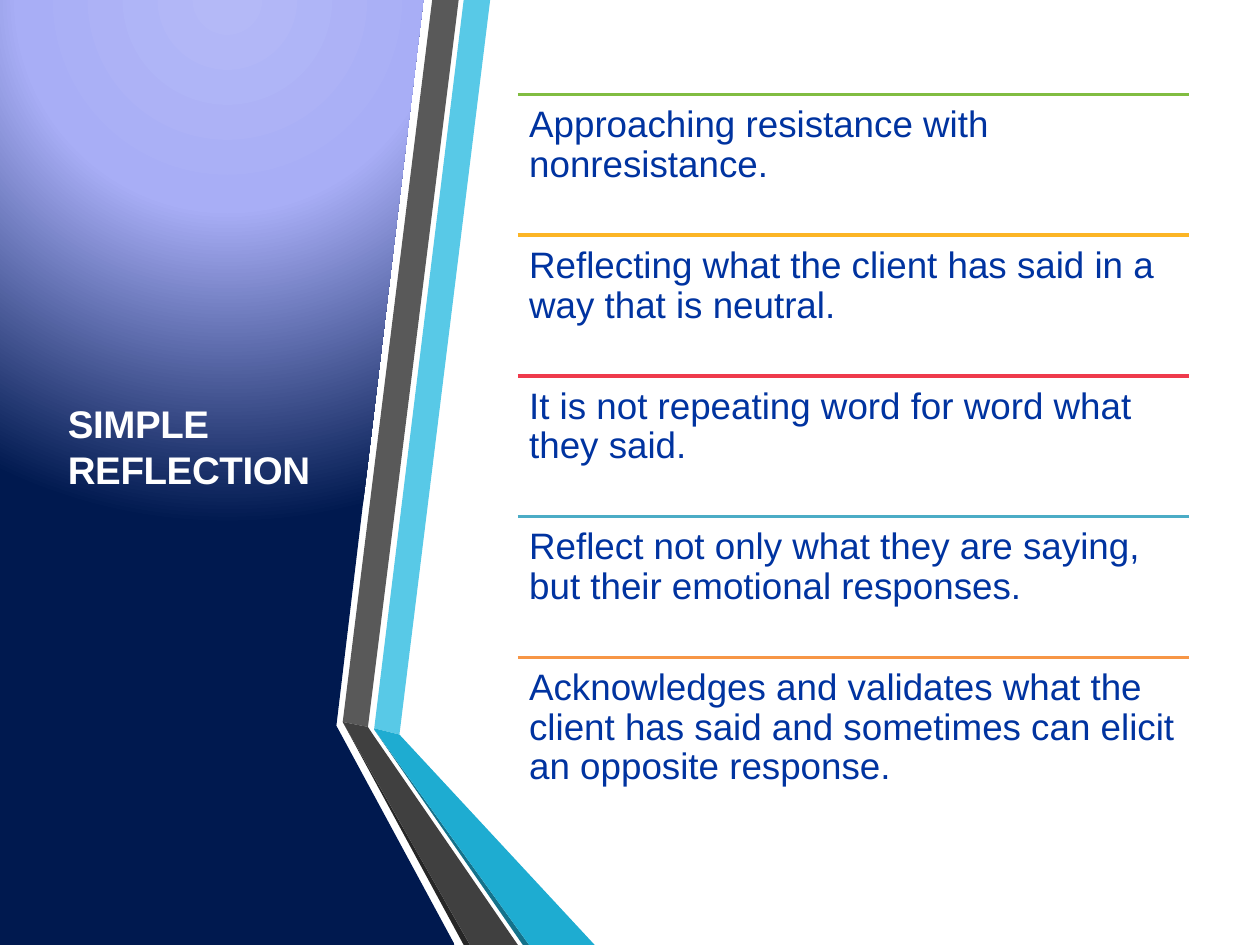
from lxml import etree
from pptx import Presentation
from pptx.dml.color import RGBColor
from pptx.enum.shapes import MSO_CONNECTOR
from pptx.enum.text import MSO_ANCHOR
from pptx.oxml import parse_xml
from pptx.oxml.ns import qn
from pptx.util import Inches, Pt

LINE = MSO_CONNECTOR.STRAIGHT
TOP, MIDDLE = MSO_ANCHOR.TOP, MSO_ANCHOR.MIDDLE
FONT = "Arial"
W, H = 10, 7.5

# List of points: one column, rows of equal height
LEFT, WIDTH = 4.11, 5.33
FIRST_ROW, ROW = 0.1 * H, 1.117
POINTS = [
    ("81BD41", "Approaching resistance with nonresistance."),
    ("FCB525", "Reflecting what the client has said in a way that is neutral."),
    ("EF3A4C", "It is not repeating word for word what they said."),
    ("4BACC6", "Reflect not only what they are saying, but their emotional responses."),
    ("F79646", "Acknowledges and validates what the client has said and "
               "sometimes can elicit an opposite response."),
]

# Left panel and the folded ribbons beside it
PANEL = [(0, 0), (3.36, 0), (2.67, 5.76), (3.61, H), (0, H)]
RIBBONS = [
    ("58C9E7", [(2.97, 5.78), (3.17, 5.83), (3.89, 0), (3.68, 0)]),
    ("595959", [(3.64, 0), (3.43, 0), (2.72, 5.73), (2.92, 5.77)]),
    ("262626", [(2.72, 5.73), (3.68, H), (3.73, H)]),
    ("14728B", [(2.97, 5.79), (4.15, H), (4.2, H)]),
    ("1EACD1", [(2.97, 5.79), (4.2, H), (4.72, H), (3.17, 5.83), (2.97, 5.78)]),
    ("404040", [(4.11, H), (2.96, 5.83), (2.92, 5.77), (2.72, 5.73), (3.73, H)]),
]
PANEL_STOPS = [(0, "B4B9F7"), (40, "A8AEF6"), (100, "00194F")]
A_NS = "http://schemas.openxmlformats.org/drawingml/2006/main"


def rgb(color):
    return RGBColor.from_string(color)


def add_outline(shapes, points, color):
    pts = [(Inches(x), Inches(y)) for x, y in points]
    builder = shapes.build_freeform(*pts[0], scale=1.0)
    builder.add_line_segments(pts[1:], close=True)
    sp = builder.convert_to_shape()
    sp.shadow.inherit = False
    sp.fill.solid()
    sp.fill.fore_color.rgb = rgb(color)
    sp.line.fill.background()
    return sp


def set_radial_fill(sp, stops):
    """Replace the solid fill by a circular gradient centred above the shape."""
    gs = "".join(f'<a:gs pos="{pos * 1000}"><a:srgbClr val="{color}"/></a:gs>'
                 for pos, color in stops)
    grad = parse_xml(
        f'<a:gradFill xmlns:a="{A_NS}" rotWithShape="1"><a:gsLst>{gs}</a:gsLst>'
        '<a:path path="circle"><a:fillToRect l="50000" t="-80000" r="50000" b="180000"/>'
        '</a:path></a:gradFill>')
    props = sp.fill._xPr
    props.replace(props.find(qn("a:solidFill")), grad)


def add_rule(shapes, x, y, width, color):
    line = shapes.add_connector(LINE, Inches(x), Inches(y), Inches(x + width), Inches(y))
    line.line.color.rgb = rgb(color)
    line.line.width = Pt(2)
    etree.SubElement(line._element.spPr, qn("a:effectLst"))


def add_text(shapes, box, text, size, color, anchor=TOP, inset=0.09, spacing=None):
    sp = shapes.add_textbox(*[Inches(v) for v in box])
    tf = sp.text_frame
    tf.word_wrap = True
    tf.vertical_anchor = anchor
    tf.margin_left = tf.margin_right = tf.margin_top = tf.margin_bottom = Inches(inset)
    p = tf.paragraphs[0]
    p.text = text
    p.line_spacing = spacing
    r = p.runs[0]
    r.font.name = FONT
    r.font.size = Pt(size)
    r.font.color.rgb = rgb(color)
    return r


def main():
    prs = Presentation()
    prs.slide_width, prs.slide_height = Inches(W), Inches(H)
    shapes = prs.slides.add_slide(prs.slide_layouts[6]).shapes

    # Panel and ribbons
    panel = add_outline(shapes, PANEL, "00194F")
    set_radial_fill(panel, PANEL_STOPS)
    ribbons = shapes.add_group_shape().shapes
    for color, points in RIBBONS:
        add_outline(ribbons, points, color)

    # Title
    r = add_text(shapes, (0.44, 0.75, 2.28, 5.58), "SIMPLE REFLECTION", 22, "FFFFFF",
                 anchor=MIDDLE, inset=0.1)
    r.font.bold = True
    r._r.get_or_add_rPr().set("spc", "-20")

    # Points, each under a coloured rule
    for i, (color, text) in enumerate(POINTS):
        y = FIRST_ROW + i * ROW
        add_rule(shapes, LEFT, y, WIDTH, color)
        add_text(shapes, (LEFT, y, WIDTH, ROW), text, 21, "0033A0", spacing=0.9)

    prs.save("out.pptx")


if __name__ == "__main__":
    main()
